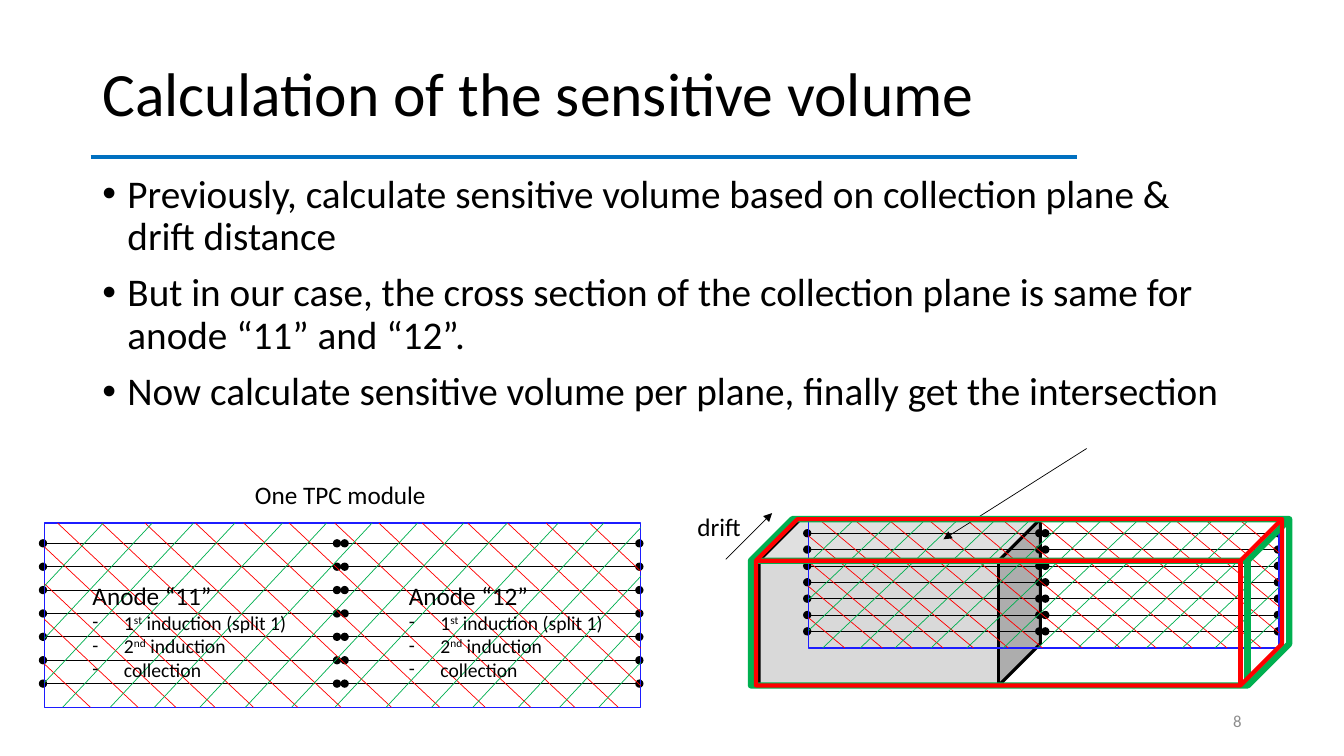
from pptx import Presentation
from pptx.dml.color import RGBColor
from pptx.enum.shapes import MSO_CONNECTOR, MSO_SHAPE
from pptx.enum.text import MSO_ANCHOR, MSO_AUTO_SIZE, PP_ALIGN as ALIGN
from pptx.util import Pt
from lxml.etree import SubElement
from pptx.oxml.ns import qn

rgb = RGBColor.from_string
BLACK, RED, GREEN, BLUE = "000000", "FF0000", "00B050", "1C1CFF"


def add_line(shapes, start, end, color, width=0.5, head=None, tail=None):
    line = shapes.add_connector(MSO_CONNECTOR.STRAIGHT, *map(Pt, start + end))
    line.line.color.rgb = rgb(color)
    line.line.width = Pt(width)
    ln = line.line._get_or_add_ln()
    for tag, arrow in (("a:headEnd", head), ("a:tailEnd", tail)):
        if arrow:
            SubElement(ln, qn(tag), type=arrow)
    SubElement(line._element.spPr, qn("a:effectLst"))


def add_solid(shapes, preset, box, color, width, fill=None):
    solid = shapes.add_shape(preset, *map(Pt, box))
    solid.shadow.inherit = False
    solid.line.color.rgb = rgb(color)
    solid.line.width = Pt(width)
    if fill:
        solid.fill.solid()
        solid.fill.fore_color.rgb = rgb(fill)
    else:
        solid.fill.background()


prs = Presentation()
prs.slide_width, prs.slide_height = Pt(960), Pt(540)
slide = prs.slides.add_slide(prs.slide_layouts[5])
shapes = slide.shapes

# Title and its rule
title = shapes.title
title.left, title.top, title.width, title.height = Pt(66), Pt(28.8), Pt(828), Pt(80)
title_frame = title.text_frame
title_frame.text = "Calculation of the sensitive volume"
title_frame.vertical_anchor = MSO_ANCHOR.MIDDLE
title_frame.auto_size = MSO_AUTO_SIZE.NONE
heading = title_frame.paragraphs[0]
heading.alignment = ALIGN.LEFT
heading.line_spacing = 0.9
heading.font.size = Pt(44)
heading.font.name = "Calibri"
heading.font.color.rgb = rgb(BLACK)
add_line(shapes, (64.8, 112.3), (769, 112.3), "0070C0", 3)

# Wire planes of one module: drawn flat, then smaller inside the drift volume
MODULE_W, MODULE_H = 426, 131.5
RED_TOPS = [-107, -73, -46, -18, 9.5, 41, 72, 108, 142.5, 175, 207.5, 239,
            270, 302.5, 331, 358.5, 389.5]
GREEN_TOPS = [519, 491, 461.5, 429, 399.5, 367, 330.5, 299.5, 266.5, 234,
              201.5, 170, 136, 106.5, 77, 42]
INDUCTION_PLANES = [(RED, RED_TOPS, 0.94), (GREEN, GREEN_TOPS, -1.07)]
COLLECTION_SPANS = [(209, -1), (425, 214.5)]
FLAT_MODULE = (31.7, 373.7, 426, 131.5)
DRIFT_MODULE = (577.4, 370.8, 336.2, 92)

for box in (FLAT_MODULE, DRIFT_MODULE):
    left, top, width, height = box
    if box == DRIFT_MODULE:
        add_solid(shapes, MSO_SHAPE.CUBE, (542.2, 370.8, 200.9, 118.8), BLACK, 2.25, "D9D9D9")
    x_scale, y_scale = width / MODULE_W, height / MODULE_H
    module = shapes.add_group_shape().shapes
    for right_end, left_end in COLLECTION_SPANS:
        for wire in range(7):
            y = top + (14.4 + 16.7 * wire) * y_scale
            add_line(module, (left + right_end * x_scale, y),
                     (left + left_end * x_scale, y), BLACK, head="oval", tail="oval")
    add_solid(module, MSO_SHAPE.RECTANGLE, box, BLUE, 1)
    for color, wire_tops, slope in INDUCTION_PLANES:
        for wire_top in wire_tops:
            # Each slanted wire stops at the edges of the module
            x_start = min(max(wire_top, 0), MODULE_W)
            x_end = min(max(wire_top + MODULE_H / slope, 0), MODULE_W)
            start, end = [(left + x * x_scale, top + (x - wire_top) * slope * y_scale)
                          for x in (x_start, x_end)]
            add_line(module, start, end, color)

# Drift direction, pointer and the volumes of the other planes
add_line(shapes, (518.4, 399.6), (551.5, 366.5), BLACK, tail="triangle")
add_line(shapes, (776.2, 320.4), (673.9, 385.2), BLACK, tail="triangle")
add_solid(shapes, MSO_SHAPE.CUBE, (536.4, 370.8, 384.5, 118.8), GREEN, 4.5)
add_solid(shapes, MSO_SHAPE.CUBE, (540, 370.8, 375.8, 118.8), RED, 3)

# Text: box, lines, size of first line, size of the others, bullet, alignment, colour
# Text between carets is superscript
PLANES = ["1^st^ induction (split 1)", "2^nd^ induction", "collection"]
POINTS = [
    "Previously, calculate sensitive volume based on collection plane & drift distance",
    "But in our case, the cross section of the collection plane is same for anode “11” and “12”.",
    "Now calculate sensitive volume per plane, finally get the intersection",
]
TEXTS = [
    ((66, 121, 828, 366), POINTS, 28, 28, "•", ALIGN.LEFT, BLACK),
    ((59, 411, 177, 80), ["Anode “11”"] + PLANES, 18, 14, "-", ALIGN.LEFT, BLACK),
    ((285, 411, 186, 80), ["Anode “12”"] + PLANES, 18, 14, "-", ALIGN.LEFT, BLACK),
    ((175, 339, 142.5, 29), ["One TPC module"], 18, 18, None, ALIGN.LEFT, BLACK),
    ((491, 361.5, 59, 29), ["drift"], 18, 18, None, ALIGN.LEFT, BLACK),
    ((678, 500.4, 216, 28.8), ["8"], 12, 12, None, ALIGN.RIGHT, "8C8C8C"),
]
for box, lines, first_size, size, bullet, alignment, color in TEXTS:
    frame = shapes.add_textbox(*map(Pt, box)).text_frame
    frame.word_wrap = True
    if lines == ["8"]:
        frame.vertical_anchor = MSO_ANCHOR.MIDDLE
    for number, line in enumerate(lines):
        paragraph = frame.add_paragraph() if number else frame.paragraphs[0]
        if bullet == "•" or (bullet and number):
            indent = Pt(18 if bullet == "•" else 22.5)
            properties = paragraph._p.get_or_add_pPr()
            properties.set("marL", str(indent))
            properties.set("indent", str(-indent))
            SubElement(properties, qn("a:buFont"), typeface="Arial" if bullet == "•" else "Calibri")
            SubElement(properties, qn("a:buChar"), char=bullet)
        if bullet == "•":
            paragraph.line_spacing = 0.9
            paragraph.space_before = Pt(10 if number else 0)
        paragraph.alignment = alignment
        paragraph.font.size = Pt(size if number else first_size)
        paragraph.font.name = "Calibri"
        paragraph.font.color.rgb = rgb(color)
        for part, words in enumerate(line.split("^")):
            run = paragraph.add_run()
            run.text = words
            if part % 2:
                run._r.get_or_add_rPr().set("baseline", "30000")

prs.save("out.pptx")
